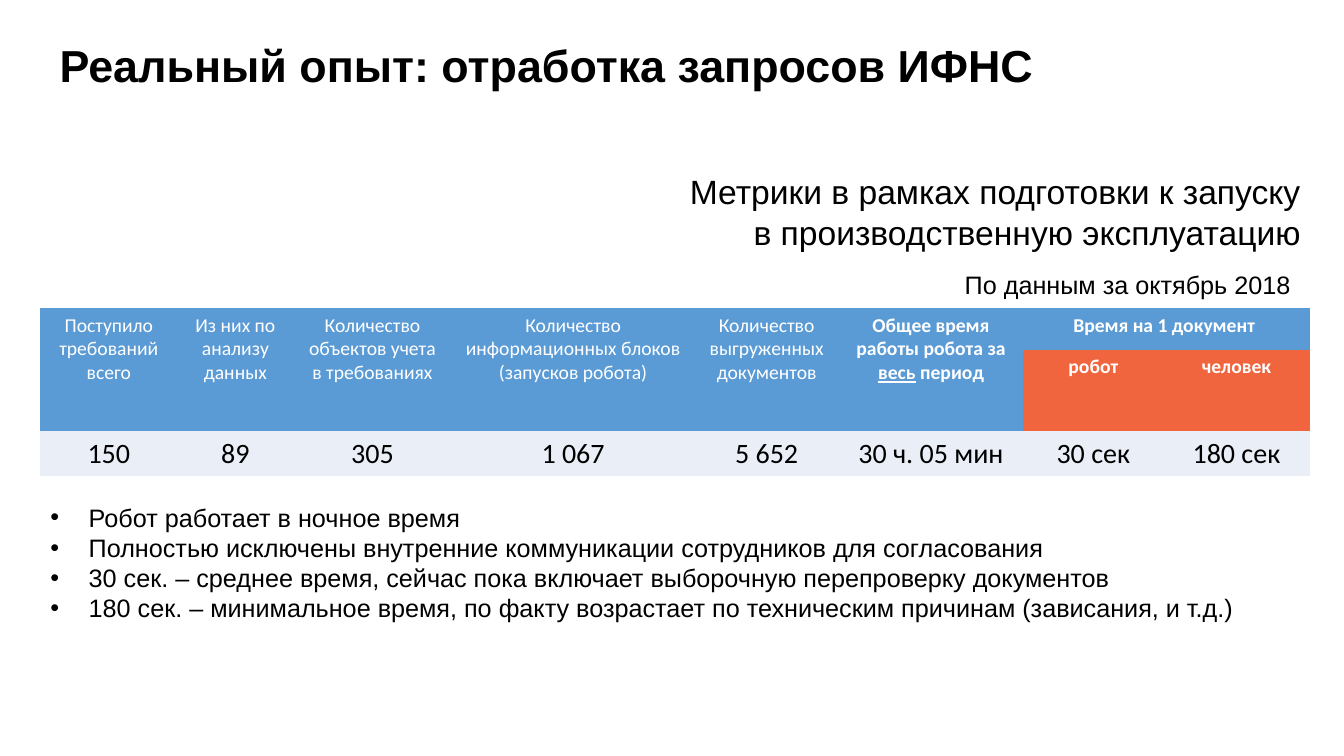
from lxml import etree
from pptx import Presentation
from pptx.dml.color import RGBColor
from pptx.enum.text import MSO_ANCHOR, MSO_AUTO_SIZE, PP_ALIGN
from pptx.oxml.ns import qn
from pptx.util import Inches, Pt

LEFT, CENTER, RIGHT = PP_ALIGN.LEFT, PP_ALIGN.CENTER, PP_ALIGN.RIGHT
TOP = MSO_ANCHOR.TOP
NO_AUTOFIT = MSO_AUTO_SIZE.NONE
BLACK, WHITE = "000000", "FFFFFF"
BLUE, ORANGE, PALE = "5B9BD5", "F0643E", "EAEFF7"
PLAIN_TABLE_STYLE = "{2D5ABB26-0587-4C30-8999-92F81FD0307C}"


def rgb(value):
    return RGBColor.from_string(value)


def add_run(paragraph, text, size, font="Arial", color=BLACK, bold=False):
    run = paragraph.add_run()
    run.text = text
    run.font.size = Pt(size)
    run.font.name = font
    run.font.bold = bold
    run.font.color.rgb = rgb(color)
    return run


prs = Presentation()
prs.slide_width, prs.slide_height = Inches(13.33), Inches(7.5)
slide = prs.slides.add_slide(prs.slide_layouts[1])
heading, conclusions = slide.placeholders

# Title
heading.left, heading.top = Inches(0.59), Inches(0.43)
heading.width, heading.height = Inches(12), Inches(0.49)
frame = heading.text_frame
frame.margin_left = frame.margin_right = frame.margin_top = frame.margin_bottom = 0
frame.vertical_anchor = TOP
frame.auto_size = NO_AUTOFIT
heading_line = frame.paragraphs[0]
heading_line.alignment = LEFT
heading_line.line_spacing = 0.9
add_run(heading_line, "Реальный опыт: отработка запросов ИФНС", 32, bold=True)

# Metrics table
columns = [
    ("Поступило требований всего", "150", 1.36),
    ("Из них по анализу данных", "89", 1.15),
    ("Количество объектов учета в требованиях", "305", 1.57),
    ("Количество информационных блоков (запусков робота)", "1 067", 2.41),
    ("Количество выгруженных документов", "5 652", 1.43),
    ("Общее время работы робота за |весь| период", "30 ч. 05 мин", 1.83),
    ("робот", "30 сек", 1.39),
    ("человек", "180 сек", 1.45),
]
TIME_COL, ROBOT_COL = 5, 6
metrics_frame = slide.shapes.add_table(
    3, len(columns), Inches(0.4), Inches(3.06), Inches(12.59), Inches(1.25))
metrics = metrics_frame.table
metrics_frame._element.find(".//" + qn("a:tableStyleId")).text = PLAIN_TABLE_STYLE
for row, height in zip(metrics.rows, (0.41, 0.41, 0.43)):
    row.height = Inches(height)

for col, (header, value, width) in enumerate(columns):
    metrics.columns[col].width = Inches(width)
    per_document = col >= ROBOT_COL
    for row, fill in enumerate((BLUE, ORANGE if per_document else BLUE, PALE)):
        cell = metrics.cell(row, col)
        cell.fill.solid()
        cell.fill.fore_color.rgb = rgb(fill)
        cell.text_frame.paragraphs[0].alignment = CENTER
    if not per_document:
        metrics.cell(0, col).merge(metrics.cell(1, col))
    header_line = metrics.cell(int(per_document), col).text_frame.paragraphs[0]
    for part, text in enumerate(header.split("|")):
        run = add_run(header_line, text, 14, "Calibri", WHITE, bold=col >= TIME_COL)
        if part == 1:
            run.font.underline = True
    add_run(metrics.cell(2, col).text_frame.paragraphs[0], value, 20, "Calibri")

time_header = metrics.cell(0, ROBOT_COL)
time_header.merge(metrics.cell(0, ROBOT_COL + 1))
add_run(time_header.text_frame.paragraphs[0], "Время на 1 документ ", 14,
        "Calibri", WHITE, bold=True)

# Bulleted conclusions
conclusions.left, conclusions.top = Inches(0.4), Inches(4.93)
conclusions.width, conclusions.height = Inches(12.4), Inches(1.31)
frame = conclusions.text_frame
frame.vertical_anchor = TOP
frame.auto_size = NO_AUTOFIT
points = [
    "Робот работает в ночное время",
    "Полностью исключены внутренние коммуникации сотрудников для согласования",
    "30 сек. – среднее время, сейчас пока включает выборочную перепроверку документов",
    "180 сек. – минимальное время, по факту возрастает по техническим причинам (зависания, и т.д.)",
]
for index, point in enumerate(points):
    line = frame.add_paragraph() if index else frame.paragraphs[0]
    line.space_before = Pt(0)
    add_run(line, point, 18)
    properties = line._p.get_or_add_pPr()
    properties.set("marL", str(Inches(0.38)))
    properties.set("indent", str(-Inches(0.38)))
    etree.SubElement(properties, qn("a:buChar")).set("char", "•")

# Table captions
captions = [
    (0.49, 1.65, 12.6, 0.91, 24, RIGHT,
     ["Метрики в рамках подготовки к запуску ", "в производственную эксплуатацию "]),
    (9.47, 2.62, 3.47, 0.4, 18, LEFT, ["По данным за октябрь 2018"]),
]
for left, top, width, height, size, alignment, lines in captions:
    caption = slide.shapes.add_textbox(
        Inches(left), Inches(top), Inches(width), Inches(height))
    caption.text_frame.word_wrap = True
    paragraph = caption.text_frame.paragraphs[0]
    paragraph.alignment = alignment
    for index, text in enumerate(lines):
        if index:
            paragraph.add_line_break()
        add_run(paragraph, text, size)

prs.save("out.pptx")
